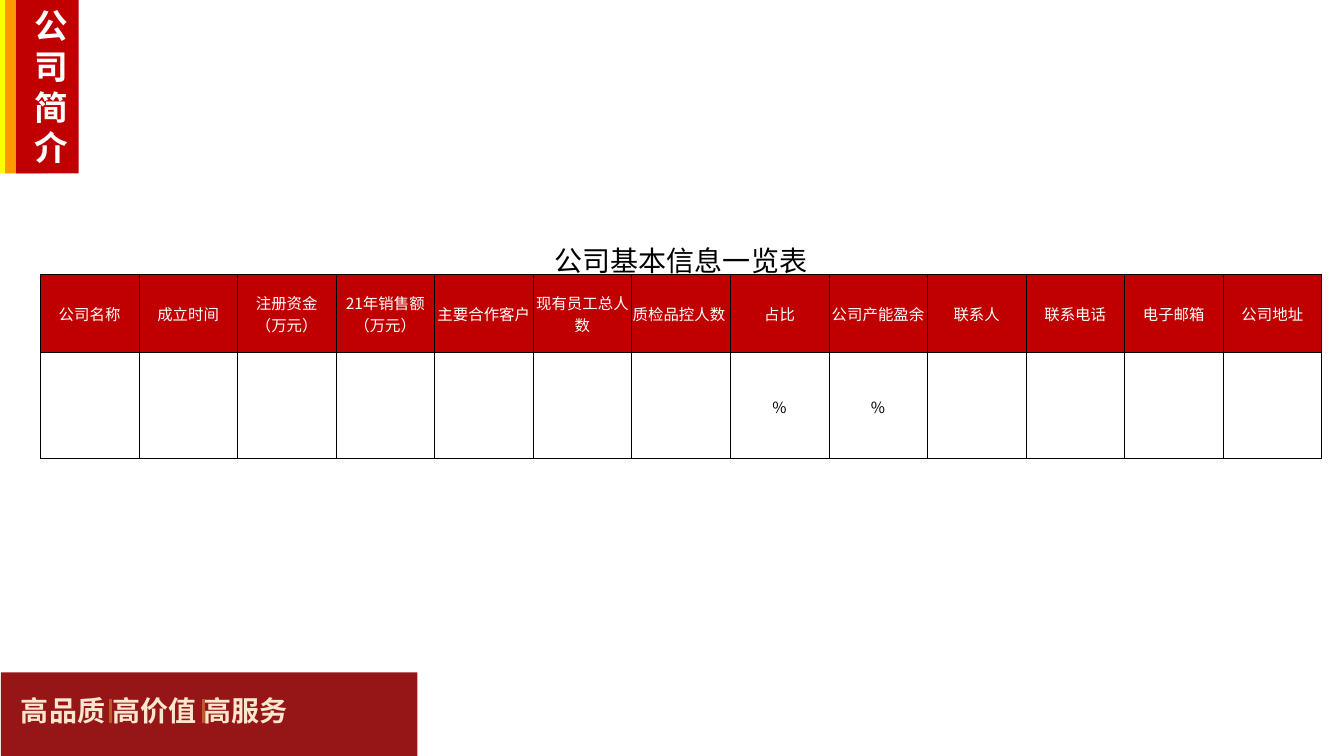
from dataclasses import dataclass

from lxml.etree import SubElement
from pptx import Presentation
from pptx.dml.color import RGBColor
from pptx.enum.shapes import MSO_CONNECTOR, MSO_SHAPE
from pptx.enum.text import MSO_ANCHOR, PP_ALIGN
from pptx.oxml.ns import qn
from pptx.util import Inches, Pt


@dataclass(frozen=True)
class Theme:
    """Colours, fonts and type sizes of the slide."""
    red: str = "C00000"
    orange: str = "FF9900"
    yellow: str = "FFFF00"
    maroon: str = "961617"
    cream: str = "FBE6CE"
    rust: str = "BD582C"
    white: str = "FFFFFF"
    black: str = "000000"
    cjk_font: str = "Noto Sans CJK SC"
    motto_font: str = "Roboto"
    tab_size: int = 24
    title_size: int = 20
    cell_size: int = 11


THEME = Theme()
HEADERS = ["公司名称", "成立时间", "注册资金\n（万元）", "21年销售额（万元）", "主要合作客户",
           "现有员工总人数", "质检品控人数", "占比", "公司产能盈余", "联系人",
           "联系电话", "电子邮箱", "公司地址"]
LEFT_ALIGNED = "质检品控人数"
PERCENT_HEADERS = ("占比", "公司产能盈余")


def write_text(frame, text, size, color, font=THEME.cjk_font, bold=False,
               align=PP_ALIGN.CENTER, line_spacing=None):
    """Fill a text frame with one paragraph per line of text."""
    for index, line in enumerate(text.split("\n")):
        paragraph = frame.add_paragraph() if index else frame.paragraphs[0]
        paragraph.alignment = align
        paragraph.line_spacing = line_spacing
        run = paragraph.add_run()
        run.text = line
        run.font.size = Pt(size)
        run.font.bold = bold
        run.font.color.rgb = RGBColor.from_string(color)
        run.font.name = font
        SubElement(run.font._element, qn("a:ea"), typeface=font)


def add_block(slide, left, top, width, height, color):
    """Draw a plain filled rectangle."""
    block = slide.shapes.add_shape(MSO_SHAPE.RECTANGLE, Inches(left), Inches(top),
                                   Inches(width), Inches(height))
    block.shadow.inherit = False
    block.fill.solid()
    block.fill.fore_color.rgb = RGBColor.from_string(color)
    block.line.fill.background()


def add_text_box(slide, left, top, width, height, text, **text_format):
    """Add a wrapping text box."""
    box = slide.shapes.add_textbox(Inches(left), Inches(top), Inches(width), Inches(height))
    box.text_frame.word_wrap = True
    write_text(box.text_frame, text, **text_format)


def add_footer(slide, left, top, width, height):
    """Draw the motto band with its two separators."""
    add_block(slide, left, top, width, height, THEME.maroon)
    add_text_box(slide, left + 0.1, top + 0.16, 3.79, 0.44, "高品质 高价值 高服务",
                 size=THEME.title_size, color=THEME.cream, font=THEME.motto_font,
                 bold=True, align=PP_ALIGN.LEFT)
    for offset in (2.01, 1.09):
        x = Inches(left + offset)
        separator = slide.shapes.add_connector(MSO_CONNECTOR.STRAIGHT, x, Inches(top + 0.26),
                                               x, Inches(top + 0.5))
        separator.line.color.rgb = RGBColor.from_string(THEME.rust)
        separator.line.width = Pt(2.25)
        SubElement(separator._element.spPr, qn("a:effectLst"))


def add_section_tab(slide, left, top, height):
    """Draw the layered tab with the vertical section name."""
    layers = [(-0.02, 0.42, THEME.yellow), (0.05, 0.42, THEME.orange), (0.16, 0.62, THEME.red)]
    for offset, width, color in layers:
        add_block(slide, left + offset, top, width, height, color)
    add_text_box(slide, left + 0.24, top, 0.32, height, "公司简介", size=THEME.tab_size,
                 color=THEME.white, bold=True, line_spacing=Pt(29))


def set_borders(cell, sides):
    """Draw thin black borders on the given sides and none on the others."""
    properties = cell._tc.get_or_add_tcPr()
    for position, side in enumerate(("L", "R", "T", "B")):
        border = properties.makeelement(qn(f"a:ln{side}"), {"w": str(Pt(0.5))})
        if side in sides:
            fill = SubElement(border, qn("a:solidFill"))
            SubElement(fill, qn("a:srgbClr"), val=THEME.black)
        else:
            SubElement(border, qn("a:noFill"))
        properties.insert(position, border)


def format_cell(cell, text, color, size=THEME.cell_size, fill=None, sides="LRTB",
                align=PP_ALIGN.CENTER):
    """Set the fill, borders, margins and text of a table cell."""
    cell.vertical_anchor = MSO_ANCHOR.MIDDLE
    cell.margin_left = cell.margin_right = cell.margin_top = Inches(0.01)
    cell.margin_bottom = 0
    if fill:
        cell.fill.solid()
        cell.fill.fore_color.rgb = RGBColor.from_string(fill)
    else:
        cell.fill.background()
    set_borders(cell, sides)
    if text:
        write_text(cell.text_frame, text, size, color, align=align)


def add_company_table(slide, left, top, width, row_heights):
    """Add the company table: title, header and data rows."""
    count = len(HEADERS)
    table = slide.shapes.add_table(len(row_heights), count, Inches(left), Inches(top),
                                   Inches(width), Inches(sum(row_heights))).table
    table.first_row = table.horz_banding = False
    for row, height in zip(table.rows, row_heights):
        row.height = Inches(height)
    for index, header in enumerate(HEADERS):
        table.columns[index].width = Inches(width / count)
        title = "" if index else "公司基本信息一览表"
        format_cell(table.cell(0, index), title, THEME.black, THEME.title_size, sides="B")
        align = PP_ALIGN.LEFT if header == LEFT_ALIGNED else PP_ALIGN.CENTER
        format_cell(table.cell(1, index), header, THEME.white, fill=THEME.red, align=align)
        value = "%" if header in PERCENT_HEADERS else ""
        format_cell(table.cell(2, index), value, THEME.black)
    table.cell(0, 0).merge(table.cell(0, count - 1))


def main():
    """Build and save the company profile slide."""
    presentation = Presentation()
    presentation.slide_width = Inches(13.33)
    presentation.slide_height = Inches(7.5)
    slide = presentation.slides.add_slide(presentation.slide_layouts[6])
    add_footer(slide, 0.01, 6.67, 4.13, 0.83)
    add_section_tab(slide, 0, 0, 1.72)
    add_company_table(slide, 0.4, 2.36, 12.71, (0.36, 0.78, 1.05))
    presentation.save("out.pptx")


if __name__ == "__main__":
    main()
